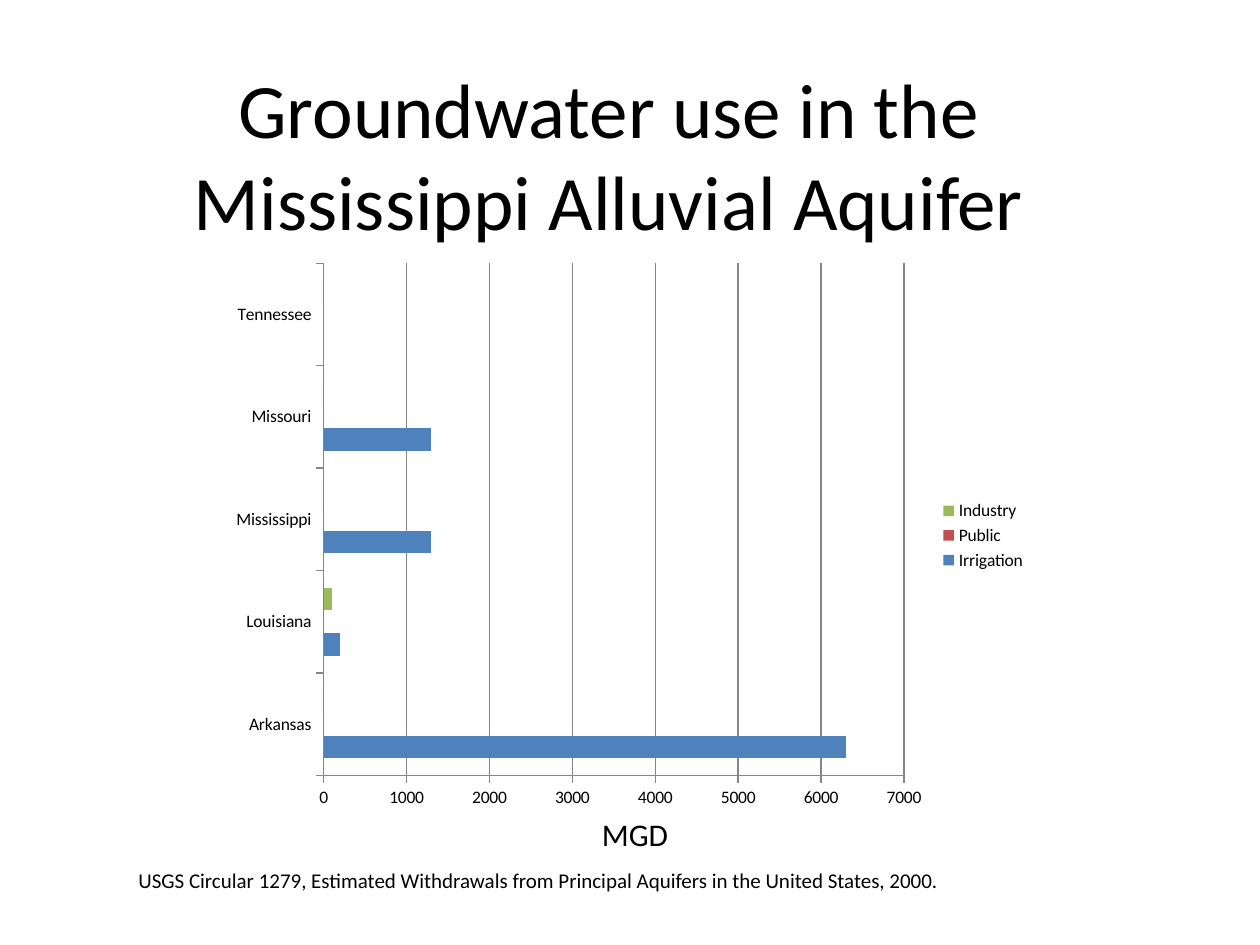
from pptx import Presentation
from pptx.chart.data import CategoryChartData
from pptx.dml.color import RGBColor
from pptx.enum.chart import XL_CHART_TYPE, XL_LEGEND_POSITION, XL_TICK_MARK
from pptx.enum.text import MSO_ANCHOR, MSO_AUTO_SIZE, PP_ALIGN
from pptx.util import Pt

PX = 914400 / 126
FONT = "Calibri"
COLORS = {
    "text": "000000", "line": "868686",
    "Irrigation": "4F81BD", "Public": "C0504D", "Industry": "9BBB59",
}
STATES = ["Arkansas", "Louisiana", "Mississippi", "Missouri", "Tennessee"]
WITHDRAWALS = {
    "Irrigation": [6300, 200, 1300, 1300, 0],
    "Public": [0, 0, 0, 0, 0],
    "Industry": [0, 100, 0, 0, 0],
}


def emu(*lengths):
    return [round(n * PX) for n in lengths]


def color(name):
    return RGBColor.from_string(COLORS[name])


def set_font(font, size):
    font.name, font.size = FONT, Pt(size)
    font.color.rgb = color("text")


def fill_text(sp, text, size, align):
    tf = sp.text_frame
    tf.word_wrap = True
    tf.text = text
    p = tf.paragraphs[0]
    p.alignment = align
    set_font(p.runs[0].font, size)
    return tf


def add_title(s, box, text):
    sp = s.shapes.title
    sp.left, sp.top, sp.width, sp.height = emu(*box)
    tf = fill_text(sp, text, 44, PP_ALIGN.CENTER)
    tf.vertical_anchor = MSO_ANCHOR.MIDDLE
    tf.auto_size = MSO_AUTO_SIZE.NONE


def add_label(s, box, text, size, align=PP_ALIGN.LEFT):
    sp = s.shapes.add_textbox(*emu(*box))
    tf = fill_text(sp, text, size, align)
    tf.auto_size = MSO_AUTO_SIZE.SHAPE_TO_FIT_TEXT


def add_usage_chart(s, box):
    data = CategoryChartData()
    data.categories = STATES
    for name, values in WITHDRAWALS.items():
        data.add_series(name, values)
    chart = s.shapes.add_chart(
        XL_CHART_TYPE.BAR_CLUSTERED, *emu(*box), data).chart
    set_font(chart.font, 10)
    chart.has_title = False

    # Bars
    plot = chart.plots[0]
    plot.gap_width = 150
    plot.vary_by_categories = False
    for series in plot.series:
        series.format.fill.solid()
        series.format.fill.fore_color.rgb = color(series.name)

    # Axes and gridlines
    cat, val = chart.category_axis, chart.value_axis
    val.minimum_scale, val.maximum_scale, val.major_unit = 0, 7000, 1000
    val.has_major_gridlines = True
    for axis in (cat, val):
        axis.major_tick_mark = XL_TICK_MARK.OUTSIDE
        axis.minor_tick_mark = XL_TICK_MARK.NONE
    for part in (cat, val, val.major_gridlines):
        part.format.line.color.rgb = color("line")
        part.format.line.width = Pt(0.75)

    # Legend
    chart.has_legend = True
    chart.legend.position = XL_LEGEND_POSITION.RIGHT
    chart.legend.include_in_layout = False


def main():
    prs = Presentation()
    prs.slide_width, prs.slide_height = emu(1260, 945)
    s = prs.slides.add_slide(prs.slide_layouts[5])
    add_title(s, (63, 52, 1092, 203),
              "Groundwater use in the Mississippi Alluvial Aquifer")
    add_label(s, (126, 861, 1008, 38),
              "USGS Circular 1279, Estimated Withdrawals from Principal "
              "Aquifers in the United States, 2000.", 12)
    add_usage_chart(s, (220, 252, 819, 567))
    add_label(s, (567, 809, 136, 50), "MGD", 18, PP_ALIGN.CENTER)
    prs.save("out.pptx")


if __name__ == "__main__":
    main()
